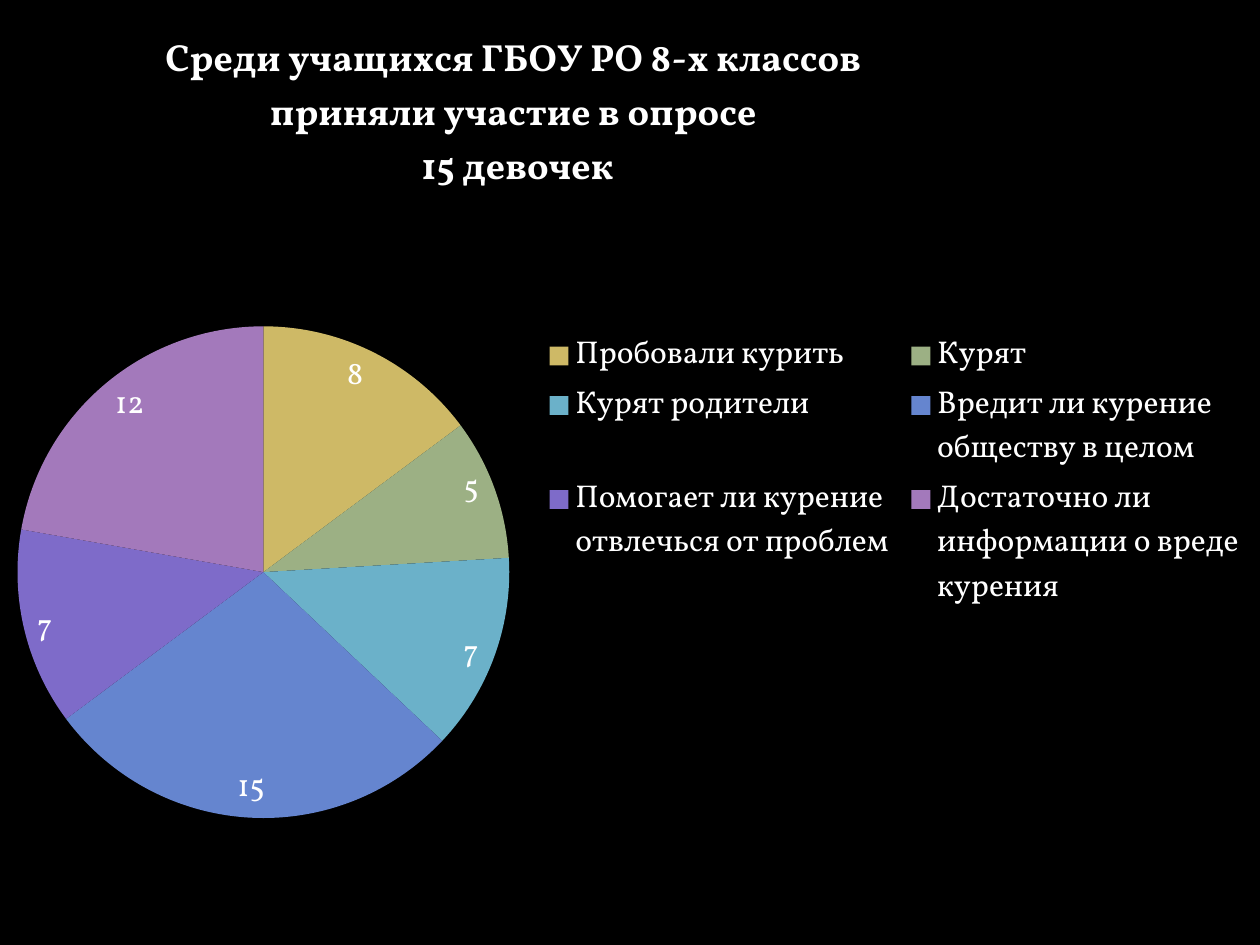
from dataclasses import dataclass

from lxml.etree import SubElement
from pptx import Presentation
from pptx.chart.chart import Chart
from pptx.chart.data import CategoryChartData
from pptx.dml.color import RGBColor
from pptx.enum.chart import XL_CHART_TYPE, XL_LABEL_POSITION, XL_LEGEND_POSITION
from pptx.enum.text import PP_ALIGN
from pptx.oxml.ns import qn
from pptx.util import Pt


@dataclass(frozen=True)
class Theme:
    font: str = "Vollkorn"
    background: str = "000000"
    text: str = "FFFFFF"
    title_size: float = 21.6
    body_size: float = 18


@dataclass(frozen=True)
class Box:
    left: float
    top: float
    width: float
    height: float


@dataclass(frozen=True)
class Answer:
    label: str
    count: int
    color: str


THEME = Theme()
PAGE = Box(0, 0, 720, 540)
TITLE_BOX = Box(92.3, 16.3, 400, 93)
PIE_BOX = Box(10, 186.5, 281, 281)
LEGEND_BOX = Box(307, 188, 408, 164)

TITLE = "Среди учащихся ГБОУ РО 8-х классов \nприняли участие в опросе \n15 девочек"
ANSWERS = [
    Answer("Пробовали курить", 8, "CEB966"),
    Answer("Курят", 5, "9CB084"),
    Answer("Курят родители", 7, "6BB1C9"),
    Answer("Вредит ли курение\nобществу в целом", 15, "6585CF"),
    Answer("Помогает ли курение\nотвлечься от проблем", 7, "7E6BC9"),
    Answer("Достаточно ли\nинформации о вреде\nкурения", 12, "A379BB"),
]


def style_font(font, size: float, bold: bool = False) -> None:
    font.name = THEME.font
    font.size = Pt(size)
    font.bold = bold
    font.color.rgb = RGBColor.from_string(THEME.text)


def place(part, box: Box, inner: bool = False, sized: bool = True) -> None:
    """Give a chart part a manual layout, as fractions of the page."""
    for old in part.findall(qn("c:layout")):
        part.remove(old)
    layout = SubElement(part, qn("c:layout"))
    overlay = part.find(qn("c:overlay"))
    if overlay is None:
        part.insert(0, layout)
    else:
        overlay.addprevious(layout)
    manual = SubElement(layout, qn("c:manualLayout"))
    values = {"xMode": "edge", "yMode": "edge",
              "x": box.left / PAGE.width, "y": box.top / PAGE.height}
    if inner:
        values = {"layoutTarget": "inner", **values}
    if sized:
        values |= {"w": box.width / PAGE.width, "h": box.height / PAGE.height}
    for tag, value in values.items():
        SubElement(manual, qn(f"c:{tag}")).set("val", str(value))


def add_title(chart: Chart) -> None:
    chart.has_title = True
    title = chart.chart_title
    tf = title.text_frame
    tf.text = TITLE
    for p in tf.paragraphs:
        p.alignment = PP_ALIGN.CENTER
        for r in p.runs:
            style_font(r.font, THEME.title_size, bold=True)
    place(title._element, TITLE_BOX, sized=False)


def add_legend(chart: Chart) -> None:
    chart.has_legend = True
    legend = chart.legend
    legend.position = XL_LEGEND_POSITION.RIGHT
    legend.include_in_layout = False
    style_font(legend.font, THEME.body_size)
    place(legend._element, LEGEND_BOX)


def style_slices(chart: Chart) -> None:
    plot = chart.plots[0]
    plot.vary_by_categories = True
    for i, answer in enumerate(ANSWERS):
        fill = plot.series[0].points[i].format.fill
        fill.solid()
        fill.fore_color.rgb = RGBColor.from_string(answer.color)
    plot.has_data_labels = True
    labels = plot.data_labels
    labels.show_value = True
    labels.show_percentage = False
    labels.position = XL_LABEL_POSITION.BEST_FIT
    style_font(labels.font, THEME.body_size)


def add_survey_chart(slide) -> None:
    data = CategoryChartData()
    data.categories = [a.label for a in ANSWERS]
    data.add_series("Series 1", [a.count for a in ANSWERS])
    chart = slide.shapes.add_chart(
        XL_CHART_TYPE.PIE, Pt(PAGE.left), Pt(PAGE.top),
        Pt(PAGE.width), Pt(PAGE.height), data).chart
    style_font(chart.font, THEME.body_size)
    add_title(chart)
    add_legend(chart)
    style_slices(chart)
    place(chart.plots[0]._element.getparent(), PIE_BOX, inner=True)


def main() -> None:
    prs = Presentation()
    prs.slide_width, prs.slide_height = Pt(PAGE.width), Pt(PAGE.height)
    slide = prs.slides.add_slide(prs.slide_layouts[6])
    fill = slide.background.fill
    fill.solid()
    fill.fore_color.rgb = RGBColor.from_string(THEME.background)
    add_survey_chart(slide)
    prs.save("out.pptx")


if __name__ == "__main__":
    main()
